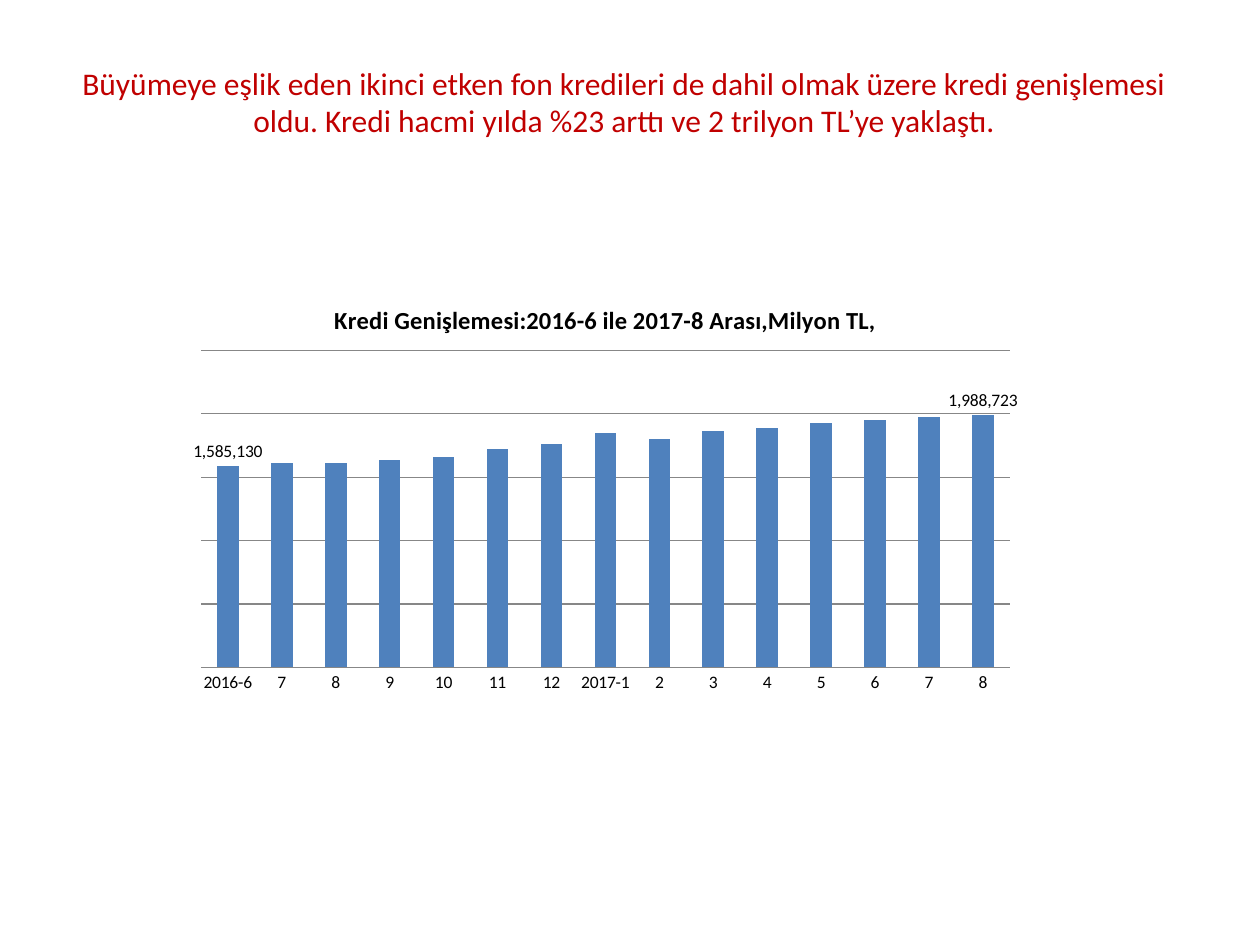
from lxml import etree
from pptx import Presentation
from pptx.chart.data import CategoryChartData
from pptx.dml.color import RGBColor
from pptx.enum.chart import XL_CHART_TYPE as ChartType
from pptx.enum.chart import XL_LABEL_POSITION as LabelPosition
from pptx.enum.chart import XL_TICK_MARK as TickMark
from pptx.enum.text import MSO_ANCHOR as Anchor
from pptx.enum.text import PP_ALIGN as Align
from pptx.oxml.ns import qn
from pptx.util import Cm, Pt

FONT = "Calibri"
RED, BLACK, BLUE, GREY = "C00000", "000000", "4F81BD", "878787"

HEADING = ("Büyümeye eşlik eden ikinci etken fon kredileri de dahil olmak üzere "
           "kredi genişlemesi oldu. Kredi hacmi yılda %23 arttı ve 2 trilyon "
           "TL’ye yaklaştı.")
CHART_TITLE = "Kredi Genişlemesi:2016-6 ile 2017-8 Arası,Milyon TL,"
MONTHS = ["2016-6", *map(str, range(7, 13)), "2017-1", *map(str, range(2, 9))]
CREDIT = [1585130, 1610272, 1615024, 1639098, 1660075, 1724691, 1765096, 1848664,
          1801462, 1861814, 1888680, 1926140, 1951679, 1972791, 1988723]
PLOT_AREA = {"x": 0.02, "y": 0.16, "w": 0.96, "h": 0.76}


def color(value):
    return RGBColor.from_string(value)


def set_all(target, formats):
    for name, value in formats.items():
        setattr(target, name, value)


def style_font(font, size, hue=BLACK, bold=False):
    set_all(font, {"name": FONT, "size": Pt(size), "bold": bold})
    font.color.rgb = color(hue)


def style_line(line):
    line.color.rgb = color(GREY)
    line.width = Pt(0.75)


def add_heading(page, left, top, width, height):
    box = page.shapes.add_textbox(left, top, width, height)
    set_all(box.text_frame, {"word_wrap": True, "vertical_anchor": Anchor.MIDDLE})
    para = box.text_frame.paragraphs[0]
    para.alignment = Align.CENTER
    span = para.add_run()
    span.text = HEADING
    style_font(span.font, 18, RED)


def place_plot(chart):
    """Fix the inner plot area as fractions of the chart."""
    plot_area = chart.plots[0]._element.getparent()
    for old in plot_area.findall(qn("c:layout")):
        plot_area.remove(old)
    layout = etree.Element(qn("c:layout"))
    plot_area.insert(0, layout)
    manual = etree.SubElement(layout, qn("c:manualLayout"))
    settings = {"layoutTarget": "inner", "xMode": "edge", "yMode": "edge", **PLOT_AREA}
    for name, value in settings.items():
        etree.SubElement(manual, qn(f"c:{name}")).set("val", str(value))


def style_axes(chart):
    months = chart.category_axis
    set_all(months, {"major_tick_mark": TickMark.NONE, "minor_tick_mark": TickMark.NONE})
    style_font(months.tick_labels.font, 10)
    style_line(months.format.line)

    amounts = chart.value_axis
    set_all(amounts, {"visible": False, "has_major_gridlines": True,
                      "minimum_scale": 0, "maximum_scale": 2500000,
                      "major_unit": 500000})
    style_line(amounts.major_gridlines.format.line)


def add_credit_chart(page, left, top, width, height):
    data = CategoryChartData(number_format="#,##0")
    data.categories = MONTHS
    data.add_series("Series 1", CREDIT)
    chart = page.shapes.add_chart(
        ChartType.COLUMN_CLUSTERED, left, top, width, height, data).chart
    set_all(chart, {"has_legend": False, "has_title": True})
    style_font(chart.font, 10)

    # Chart title
    title = chart.chart_title
    title.include_in_layout = False
    title.text_frame.text = CHART_TITLE
    style_font(title.text_frame.paragraphs[0].runs[0].font, 14, bold=True)

    # Columns, with values on the first and last month only
    set_all(chart.plots[0], {"gap_width": 150, "vary_by_categories": False})
    series = chart.plots[0].series[0]
    series.format.fill.solid()
    series.format.fill.fore_color.rgb = color(BLUE)
    series.data_labels.show_value = False
    for index in (0, len(CREDIT) - 1):
        label = series.points[index].data_label
        style_font(label.font, 10)
        label.position = LabelPosition.OUTSIDE_END

    style_axes(chart)
    place_plot(chart)


def main():
    deck = Presentation()
    set_all(deck, {"slide_width": Cm(25.4), "slide_height": Cm(19.05)})
    page = deck.slides.add_slide(deck.slide_layouts[6])
    add_heading(page, Cm(1.27), Cm(0.76), Cm(22.63), Cm(2.57))
    add_credit_chart(page, Cm(3.71), Cm(5.72), Cm(16.99), Cm(8.41))
    deck.save("out.pptx")


if __name__ == "__main__":
    main()
